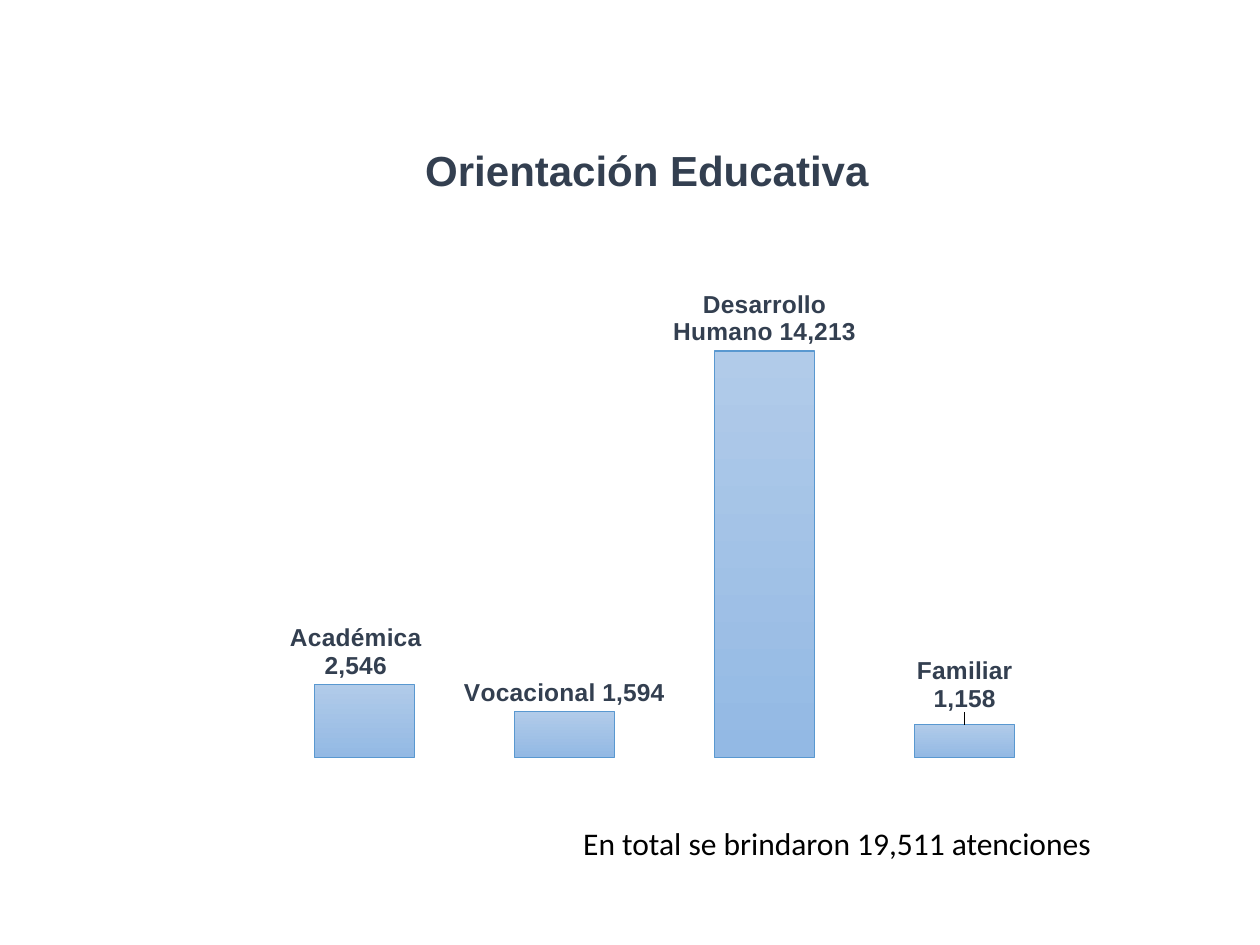
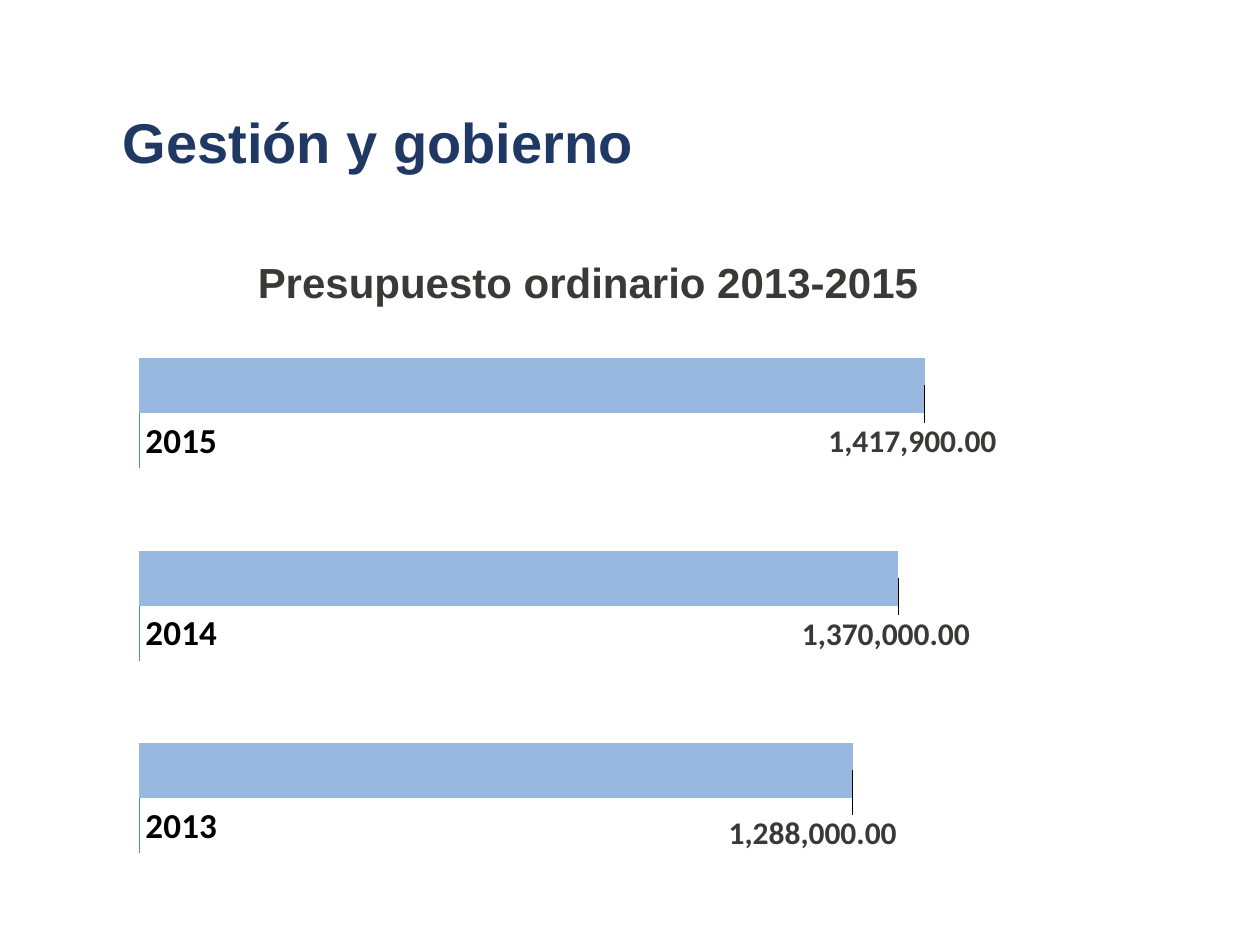
import pptx
import pptx.chart.data
import pptx.dml.color
import pptx.enum.chart
import pptx.enum.text
import pptx.oxml
import pptx.oxml.ns
import pptx.util
from dataclasses import dataclass

CHART = pptx.enum.chart.XL_CHART_TYPE
ALIGN = pptx.enum.text.PP_ALIGN
COLUMNS, ROWS = 100, 75
TITLE_ONLY, BLANK = 5, 6


@dataclass(frozen=True)
class Theme:
    head_font: str = "Arial"
    body_font: str = "Calibri"
    background: str = "FFFFFF"
    black: str = "000000"
    navy: str = "203864"
    slate: str = "333F50"
    charcoal: str = "3B3838"
    column_top: str = "B1CBE9"
    column_bottom: str = "93B9E4"
    column_edge: str = "5998D0"
    year_bar: str = "518ABD"
    budget_bar: str = "98B8E0"
    title: int = 32
    heading: int = 24
    year: int = 20
    body: int = 18
    label: int = 14
    base: int = 10


def rgb(code):
    return pptx.dml.color.RGBColor.from_string(code)


def set_font(font, size, color, name, bold=False):
    font.size = pptx.util.Pt(size)
    font.color.rgb = rgb(color)
    font.name = name
    font.bold = bold


def write(tf, text, align=None, **style):
    """Fill a text frame, one paragraph per line of text."""
    for i, line in enumerate(text.split("\n")):
        p = tf.add_paragraph() if i else tf.paragraphs[0]
        p.alignment = align
        r = p.add_run()
        r.text = line
        set_font(r.font, **style)


def place(element, index, inner=False, edge=True, **shares):
    """Give a chart part a manual layout, in shares of the chart's size."""
    for old in element.findall(pptx.oxml.ns.qn("c:layout")):
        element.remove(old)
    values = [("layoutTarget", "inner")] if inner else []
    if edge:
        values += [("xMode", "edge"), ("yMode", "edge")]
    values += shares.items()
    parts = "".join(f'<c:{tag} val="{value}"/>' for tag, value in values)
    element.insert(index, pptx.oxml.parse_xml(
        f'<c:layout {pptx.oxml.ns.nsdecls("c")}>'
        f'<c:manualLayout>{parts}</c:manualLayout></c:layout>'))


class Deck:
    def __init__(self, theme):
        self.theme = theme
        self.prs = pptx.Presentation()
        self.prs.slide_width = pptx.util.Inches(10)
        self.prs.slide_height = pptx.util.Inches(7.5)
        self.s = None

    def box(self, left, top, width, height):
        """Turn grid columns and rows into lengths."""
        col, row = self.prs.slide_width / COLUMNS, self.prs.slide_height / ROWS
        return [round(n) for n in (left * col, top * row, width * col, height * row)]

    def slide(self, layout):
        self.s = self.prs.slides.add_slide(self.prs.slide_layouts[layout])
        fill = self.s.background.fill
        fill.solid()
        fill.fore_color.rgb = rgb(self.theme.background)

    def title(self, text, *cells):
        sp = self.s.shapes.title
        sp.left, sp.top, sp.width, sp.height = self.box(*cells)
        tf = sp.text_frame
        tf.auto_size = pptx.enum.text.MSO_AUTO_SIZE.NONE
        tf.vertical_anchor = pptx.enum.text.MSO_ANCHOR.MIDDLE
        write(tf, text, ALIGN.CENTER, size=self.theme.title, color=self.theme.navy,
              name=self.theme.head_font, bold=True)

    def note(self, text, *cells):
        tf = self.s.shapes.add_textbox(*self.box(*cells)).text_frame
        tf.word_wrap = True
        write(tf, text, size=self.theme.body, color=self.theme.black,
              name=self.theme.body_font)

    def chart(self, kind, cells, categories, series, heading, heading_color,
              heading_at, plot_at, gap, overlap=0):
        """Add a bar chart without axes, with a placed heading and plot."""
        data = pptx.chart.data.CategoryChartData()
        data.categories = categories
        for name, values, number_format in series:
            data.add_series(name, values, number_format)
        chart = self.s.shapes.add_chart(kind, *self.box(*cells), data).chart
        set_font(chart.font, self.theme.base, self.theme.black, self.theme.body_font)
        chart.has_legend = False
        for axis in (chart.category_axis, chart.value_axis):
            axis.has_major_gridlines = False
            axis.visible = False
        chart.value_axis.minimum_scale = 0
        write(chart.chart_title.text_frame, heading, size=self.theme.heading,
              color=heading_color, name=self.theme.head_font, bold=True)
        place(chart.chart_title.element, 1, **heading_at)
        place(chart.element.xpath("c:chart/c:plotArea")[0], 0, inner=True, **plot_at)
        plot = chart.plots[0]
        plot.vary_by_categories = False
        plot.gap_width, plot.overlap = gap, overlap
        for ser in plot.series:
            ser.invert_if_negative = False
        return chart

    def labels(self, ser, number_format, texts=(), offsets=(), **style):
        """Label every bar; texts replace values, offsets move single labels."""
        labels = ser.data_labels
        labels.show_value = True
        labels.number_format = number_format
        labels.number_format_is_linked = False
        outside = pptx.enum.chart.XL_LABEL_POSITION.OUTSIDE_END
        labels.position = outside
        set_font(labels.font, **style)
        for i, text in enumerate(texts):
            tf = ser.points[i].data_label.text_frame
            tf.word_wrap = False
            write(tf, text, **style)
        for i, (x, y) in enumerate(offsets):
            label = ser.points[i].data_label
            label.position = outside
            if not texts:
                set_font(label.font, **style)
            place(labels._element.xpath(f"c:dLbl[c:idx/@val={i}]")[0], 1,
                  edge=False, x=x, y=y)
        for leader in labels._element.xpath("c:showLeaderLines"):
            labels._element.remove(leader)


def guidance_slide(deck):
    theme = deck.theme
    deck.slide(BLANK)
    chart = deck.chart(
        CHART.COLUMN_CLUSTERED, (17.6, 8.1, 67.6, 54.2),
        ["Academica", "Vocacional", "Desarrollo Humano", "Familiar"],
        [("Series 1", (2546, 1594, 14213, 1158), "#,##0")],
        "Orientación Educativa", theme.slate, dict(x=0.23, y=0.05),
        dict(x=0.05, y=0.29, w=0.94, h=0.67), gap=100, overlap=-24)
    chart.value_axis.maximum_scale = 16000
    ser = chart.plots[0].series[0]
    fill = ser.format.fill
    fill.gradient()
    fill.gradient_angle = 270
    for stop, color in zip(fill.gradient_stops, (theme.column_top, theme.column_bottom)):
        stop.color.rgb = rgb(color)
    ser.format.line.color.rgb = rgb(theme.column_edge)
    ser.format.line.width = pptx.util.Pt(0.75)
    deck.labels(
        ser, "#,##0",
        texts=("Académica\n2,546", "Vocacional 1,594",
               "Desarrollo\nHumano 14,213", "Familiar\n1,158"),
        offsets=((-0.01, 0), (0, 0), (0, 0), (0, -0.01)),
        size=theme.label, color=theme.slate, name=theme.head_font, bold=True)
    deck.note("En total se brindaron 19,511 atenciones", 45.3, 64.9, 46.1, 4)


def budget_slide(deck):
    theme = deck.theme
    money = "#,##0.00"
    deck.slide(TITLE_ONLY)
    deck.title("Gestión y gobierno", 6.9, 8, 46.2, 6.4)
    chart = deck.chart(
        CHART.BAR_CLUSTERED, (9.6, 16.9, 73.3, 55.2), ["1", "2", "3"],
        [("Series 1", (2013, 2014, 2015), "0"),
         ("Series 2", (1288000, 1370000, 1417900), money)],
        "Presupuesto ordinario 2013-2015", theme.charcoal, dict(x=0.14, y=0.05),
        dict(x=0.02, y=0.15, w=0.96, h=0.83), gap=150)
    chart.value_axis.maximum_scale = 1600000
    years, budgets = chart.plots[0].series
    for ser, color in ((years, theme.year_bar), (budgets, theme.budget_bar)):
        ser.format.fill.solid()
        ser.format.fill.fore_color.rgb = rgb(color)
    deck.labels(years, "0", size=theme.year, color=theme.black,
                name=theme.body_font, bold=True)
    deck.labels(budgets, money, offsets=((-0.14, 0.09), (-0.11, 0.08), (-0.11, 0.08)),
                size=theme.body, color=theme.charcoal, name=theme.body_font, bold=True)


def main():
    deck = Deck(Theme())
    guidance_slide(deck)
    budget_slide(deck)
    deck.prs.save("out.pptx")


if __name__ == "__main__":
    main()
